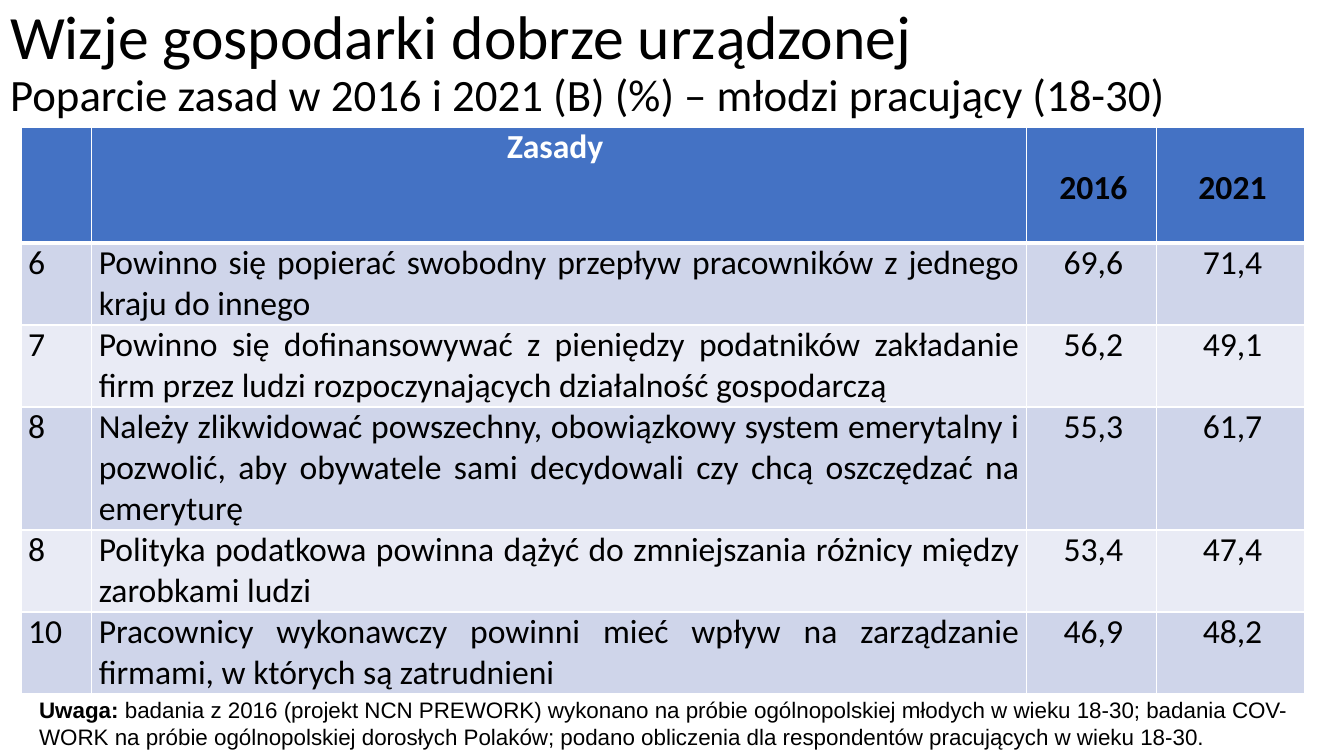
from lxml import etree
from pptx import Presentation
from pptx.dml.color import RGBColor
from pptx.enum import text
from pptx.oxml import ns
from pptx.util import Inches, Pt

TITLE = "Wizje gospodarki dobrze urządzonej"
SUBTITLE = "Poparcie zasad w 2016 i 2021 (B) (%) – młodzi pracujący (18-30)"
HEADER = ("", "Zasady ", "2016", "2021")
PRINCIPLES = [
    ("6", "Powinno się popierać swobodny przepływ pracowników z jednego kraju do innego",
     "69,6", "71,4"),
    ("7", "Powinno się dofinansowywać z pieniędzy podatników zakładanie firm przez ludzi "
     "rozpoczynających działalność gospodarczą", "56,2", "49,1"),
    ("8", "Należy zlikwidować powszechny, obowiązkowy system emerytalny i pozwolić, aby "
     "obywatele sami decydowali czy chcą oszczędzać na emeryturę", "55,3", "61,7"),
    ("8", "Polityka podatkowa powinna dążyć do zmniejszania różnicy między zarobkami ludzi",
     "53,4", "47,4"),
    ("10", "Pracownicy wykonawczy powinni mieć wpływ na zarządzanie firmami, w których są "
     "zatrudnieni", "46,9", "48,2"),
]
NOTE_LABEL = "Uwaga: "
NOTE = ("badania z 2016 (projekt NCN PREWORK) wykonano na próbie ogólnopolskiej młodych w wieku "
        "18-30; badania COV-WORK na próbie ogólnopolskiej dorosłych Polaków; podano obliczenia "
        "dla respondentów pracujących w wieku 18-30.")

COLUMN_WIDTHS = (0.7, 9.27, 1.29, 1.47)
ROW_HEIGHTS = (1.15, 0.77, 0.77, 1.15, 0.77, 0.77)
FIRST_YEAR_COLUMN = 2

BLACK = RGBColor(0x00, 0x00, 0x00)
YEAR_BLACK = RGBColor(0x01, 0x02, 0x05)
WHITE = RGBColor(0xFF, 0xFF, 0xFF)
HEADER_BLUE = RGBColor(0x44, 0x72, 0xC4)
BANDS = (RGBColor(0xE9, 0xEB, 0xF5), RGBColor(0xCF, 0xD5, 0xEA))


def add_run(paragraph, words, size, color=BLACK, name="Calibri", bold=False):
    run = paragraph.add_run()
    run.text = words
    for key, value in {"size": Pt(size), "name": name, "bold": bold}.items():
        setattr(run.font, key, value)
    run.font.color.rgb = color


def set_borders(cell, row):
    """White 1 pt borders, 3 pt between the header and the first principle."""
    properties = cell._tc.get_or_add_tcPr()
    for side in "LRTB":
        heavy = (row, side) in ((0, "B"), (1, "T"))
        line = etree.SubElement(properties, ns.qn(f"a:ln{side}"), w=str(Pt(3 if heavy else 1)))
        fill = etree.SubElement(line, ns.qn("a:solidFill"))
        etree.SubElement(fill, ns.qn("a:srgbClr"), val=str(WHITE))


def fill_cell(cell, row, column, words):
    is_header = row == 0
    is_year = column >= FIRST_YEAR_COLUMN
    set_borders(cell, row)
    cell.fill.solid()
    cell.fill.fore_color.rgb = HEADER_BLUE if is_header else BANDS[row % 2]
    margins = {"margin_left": 0.07, "margin_right": 0.07, "margin_top": 0, "margin_bottom": 0}
    if is_header and is_year:
        cell.vertical_anchor = text.MSO_ANCHOR.MIDDLE
        margins["margin_top"] = 0.07
    for key, value in margins.items():
        setattr(cell, key, Inches(value))
    if not words:
        return
    paragraph = cell.text_frame.paragraphs[0]
    centred = is_header or is_year
    paragraph.alignment = text.PP_ALIGN.CENTER if centred else text.PP_ALIGN.JUSTIFY
    if is_year:
        paragraph._p.get_or_add_pPr().set("marL", str(Inches(0.04)))
    color = BLACK
    if is_header:
        color = YEAR_BLACK if is_year else WHITE
    add_run(paragraph, words, 24, color, bold=is_header)


def add_title(slide):
    title = slide.shapes.title
    box = {"left": 0, "top": 0, "width": 13.22, "height": 1.26}
    for key, value in box.items():
        setattr(title, key, Inches(value))
    frame = title.text_frame
    frame.word_wrap = True
    frame.auto_size = text.MSO_AUTO_SIZE.NONE
    frame.vertical_anchor = text.MSO_ANCHOR.MIDDLE
    heading = frame.paragraphs[0]
    heading.alignment = text.PP_ALIGN.LEFT
    heading.line_spacing = 0.9
    add_run(heading, TITLE, 44)
    heading.add_line_break()
    add_run(heading, SUBTITLE, 32)


def add_principles(slide):
    rows = [HEADER, *PRINCIPLES]
    table = slide.shapes.add_table(
        len(rows), len(HEADER), Inches(0.21), Inches(1.26),
        Inches(sum(COLUMN_WIDTHS)), Inches(sum(ROW_HEIGHTS))).table
    for column, width in zip(table.columns, COLUMN_WIDTHS):
        column.width = Inches(width)
    for row, height in zip(table.rows, ROW_HEIGHTS):
        row.height = Inches(height)
    for r, values in enumerate(rows):
        for c, words in enumerate(values):
            fill_cell(table.cell(r, c), r, c, words)


def add_note(slide):
    note = slide.shapes.add_textbox(Inches(0.29), Inches(6.86), Inches(12.64), Inches(0.64))
    note.text_frame.word_wrap = True
    paragraph = note.text_frame.paragraphs[0]
    add_run(paragraph, NOTE_LABEL, 16, name="Arial", bold=True)
    add_run(paragraph, NOTE, 16, name="Arial")


def main():
    deck = Presentation()
    deck.slide_width, deck.slide_height = Inches(13.33), Inches(7.5)
    slide = deck.slides.add_slide(deck.slide_layouts.get_by_name("Title Only"))
    add_principles(slide)
    add_title(slide)
    add_note(slide)
    deck.save("out.pptx")


if __name__ == "__main__":
    main()
